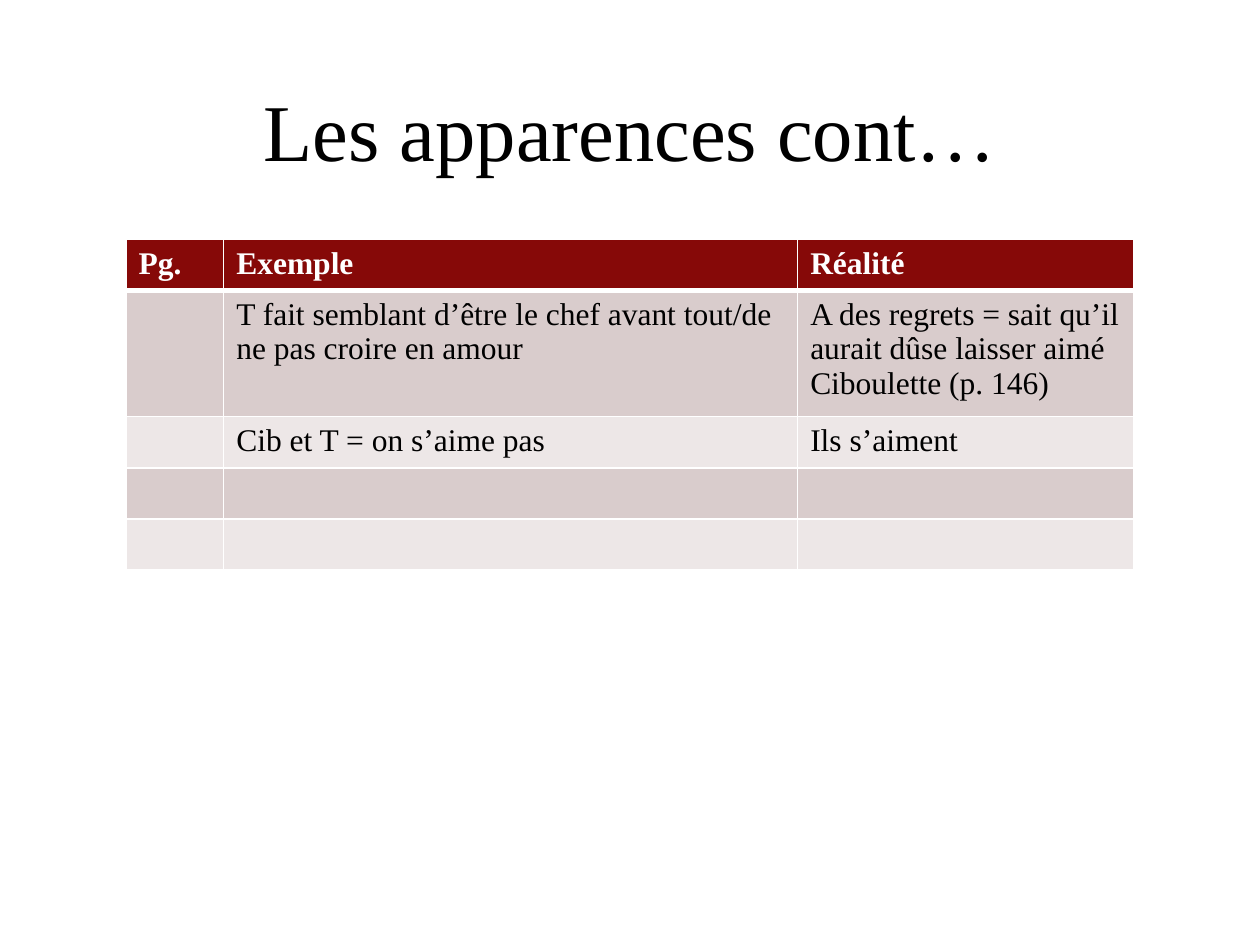
from pptx import Presentation
from pptx.dml.color import RGBColor
from pptx.enum.text import MSO_ANCHOR, PP_ALIGN
from pptx.oxml import parse_xml
from pptx.oxml.ns import nsdecls
from pptx.util import Cm, Pt

TITLE = "Les apparences cont…"
ROWS = [
    ("Pg.", "Exemple", "Réalité"),
    (
        "",
        "T fait semblant d’être le chef avant tout/de ne pas croire en amour",
        "A des regrets = sait qu’il aurait dûse laisser aimé Ciboulette (p. 146)",
    ),
    ("", "Cib et T = on s’aime pas", "Ils s’aiment"),
    ("", "", ""),
    ("", "", ""),
]
COLUMN_WIDTHS = [1.97, 11.57, 6.78]
ROW_HEIGHT = 1.03
MARGIN = 2.54
TITLE_PLACE = (MARGIN, 1.4, 20.32, 2.41)
TABLE_TOP = 4.83

THEME = {
    "font": "Times New Roman",
    "title_size": 46,
    "body_size": 18,
    "text": "000000",
    "header_text": "FFFFFF",
    "header_fill": "860908",
    "bands": ("D9CCCC", "EDE7E7"),
    "border": "FFFFFF",
    "thin": 1,
    "thick": 3,
}


def write(para, text, size, color, bold=False):
    span = para.add_run()
    span.text = text
    formats = {"name": THEME["font"], "size": Pt(size), "bold": bold}
    for name, value in formats.items():
        setattr(span.font, name, value)
    span.font.color.rgb = RGBColor.from_string(color)


def add_borders(cell, widths):
    properties = cell._tc.get_or_add_tcPr()
    for side, width in widths.items():
        properties.append(parse_xml(
            f'<a:ln{side} {nsdecls("a")} w="{Pt(width)}"><a:solidFill>'
            f'<a:srgbClr val="{THEME["border"]}"/></a:solidFill></a:ln{side}>'
        ))


def add_title(page):
    box = page.shapes.add_textbox(*map(Cm, TITLE_PLACE))
    formats = {"word_wrap": True, "vertical_anchor": MSO_ANCHOR.MIDDLE}
    for name, value in formats.items():
        setattr(box.text_frame, name, value)
    para = box.text_frame.paragraphs[0]
    para.alignment = PP_ALIGN.CENTER
    write(para, TITLE, THEME["title_size"], THEME["text"])


def add_grid(page):
    table = page.shapes.add_table(
        len(ROWS), len(COLUMN_WIDTHS), Cm(MARGIN), Cm(TABLE_TOP),
        Cm(sum(COLUMN_WIDTHS)), Cm(ROW_HEIGHT * len(ROWS)),
    ).table
    for column, width in zip(table.columns, COLUMN_WIDTHS):
        column.width = Cm(width)
    for index, texts in enumerate(ROWS):
        header = index == 0
        fill = THEME["header_fill"] if header else THEME["bands"][(index - 1) % 2]
        color = THEME["header_text"] if header else THEME["text"]
        widths = dict.fromkeys("LRTB", THEME["thin"])
        if index < 2:
            widths["B" if header else "T"] = THEME["thick"]
        table.rows[index].height = Cm(ROW_HEIGHT)
        for cell, text in zip(table.rows[index].cells, texts):
            add_borders(cell, widths)
            cell.fill.solid()
            cell.fill.fore_color.rgb = RGBColor.from_string(fill)
            if text:
                write(cell.text_frame.paragraphs[0], text, THEME["body_size"], color, header)


def main():
    deck = Presentation()
    deck.slide_width, deck.slide_height = Cm(25.4), Cm(19.05)
    page = deck.slides.add_slide(deck.slide_layouts[6])
    add_title(page)
    add_grid(page)
    deck.save("out.pptx")


if __name__ == "__main__":
    main()
